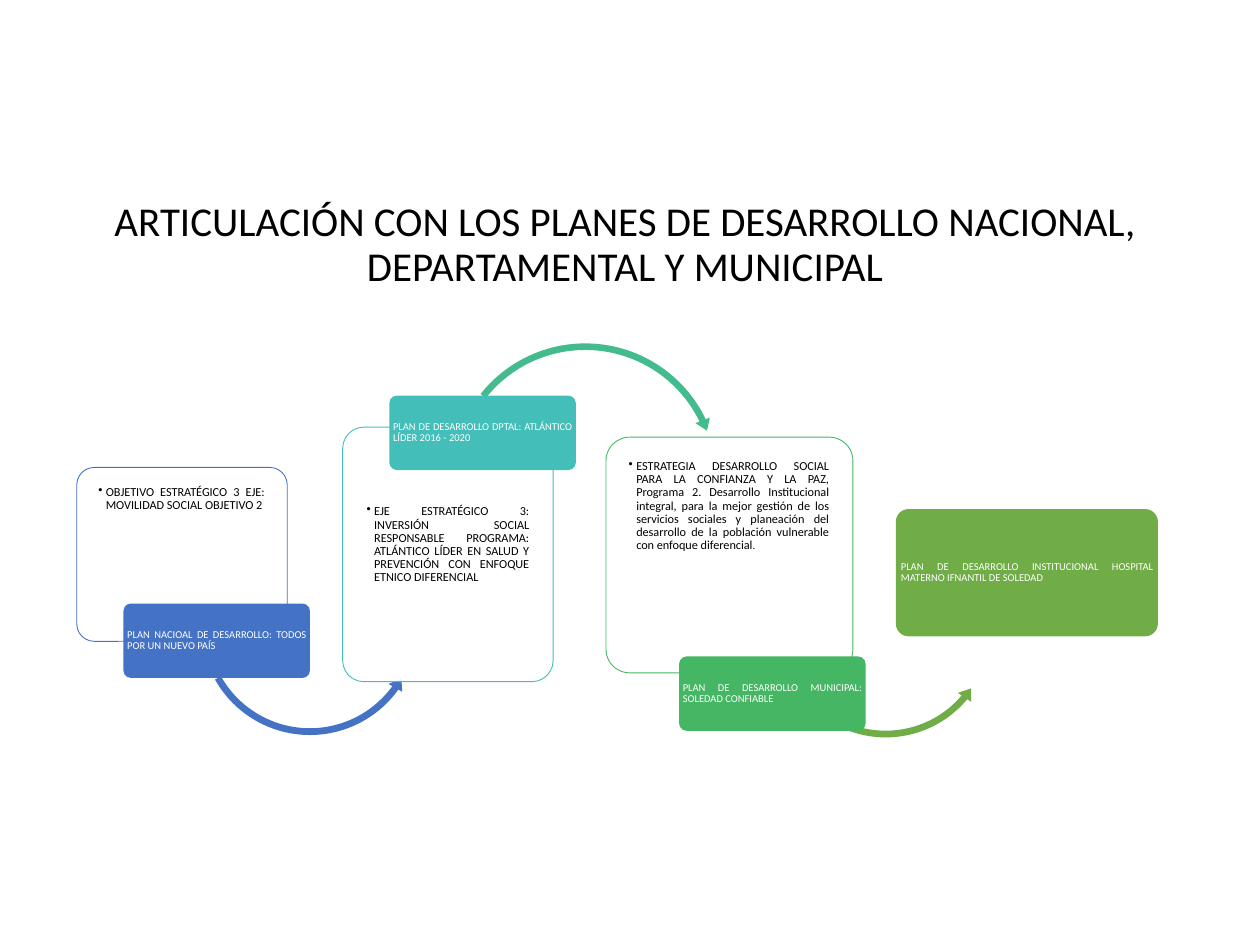
from lxml import etree
from pptx import Presentation
from pptx import util as u
from pptx.dml.color import RGBColor
from pptx.enum import shapes, text
from pptx.oxml.ns import qn

PX = 9144  # 100 px to the inch
FONT = "Calibri"
BLACK = RGBColor(0x00, 0x00, 0x00)
WHITE = RGBColor(0xFF, 0xFF, 0xFF)
BLUE = RGBColor(0x44, 0x72, 0xC4)
TEAL = RGBColor(0x43, 0xBE, 0xB9)
SEA_GREEN = RGBColor(0x43, 0xBB, 0x8D)
GREEN = RGBColor(0x45, 0xB6, 0x64)
OLIVE = RGBColor(0x70, 0xAD, 0x47)

ROUNDED = shapes.MSO_SHAPE.ROUNDED_RECTANGLE
ARC = shapes.MSO_SHAPE.CIRCULAR_ARROW
LEFT_ARC = shapes.MSO_SHAPE.LEFT_CIRCULAR_ARROW
TOP, MIDDLE = text.MSO_ANCHOR.TOP, text.MSO_ANCHOR.MIDDLE
CENTER, JUSTIFY = text.PP_ALIGN.CENTER, text.PP_ALIGN.JUSTIFY
LABEL_SIZE = (148, 59)


def px(*lengths):
    return [u.Emu(length * PX) for length in lengths]


def add_bullet(paragraph, indent):
    properties = paragraph._p.get_or_add_pPr()
    properties.set("marL", str(indent * PX))
    properties.set("indent", str(-indent * PX))
    etree.SubElement(properties, qn("a:buChar")).set("char", "•")


def set_opacity(fill, percent):
    color = fill._xPr.find(qn("a:solidFill"))[0]
    etree.SubElement(color, qn("a:alpha")).set("val", str(percent * 1000))


class Diagram:
    def __init__(self, slide, font):
        self.slide = slide
        self.font = font

    def shape(self, kind, box, color, adjustments):
        shape = self.slide.shapes.add_shape(kind, *px(*box))
        shape.shadow.inherit = False
        shape.fill.solid()
        shape.fill.fore_color.rgb = color
        shape.line.fill.background()
        for index, value in enumerate(adjustments):
            shape.adjustments[index] = value
        return shape

    def text(self, runs, box, color=BLACK, align=JUSTIFY, anchor=TOP,
             inset=(10, 5), bullet=False):
        """Add one paragraph made of (wording, size) runs."""
        frame = self.slide.shapes.add_textbox(*px(*box)).text_frame
        frame.word_wrap = True
        frame.vertical_anchor = anchor
        frame.margin_left = frame.margin_right = inset[0] * PX
        frame.margin_top = frame.margin_bottom = inset[1] * PX
        paragraph = frame.paragraphs[0]
        paragraph.alignment = align
        paragraph.line_spacing = 0.9
        if bullet:
            add_bullet(paragraph, 6)
        for wording, size in runs:
            run = paragraph.add_run()
            run.text = wording
            run.font.name = self.font
            run.font.size = u.Pt(size)
            run.font.color.rgb = color

    def card(self, box, text_box, color, runs):
        shape = self.shape(ROUNDED, box, WHITE, [0.1])
        set_opacity(shape.fill, 90)
        shape.line.color.rgb = color
        shape.line.width = u.Pt(0.5)
        self.text(runs, text_box, inset=(14, 14), bullet=True)

    def label(self, wording, box, color, border=2):
        left, top, width, height = box
        self.shape(ROUNDED, box, color, [0.1])
        inner = (left + border, top + border,
                 width - 2 * border, height - 2 * border)
        self.text([(wording, 6)], inner, color=WHITE, anchor=MIDDLE, inset=(1, 1))

    def arrow(self, kind, left, top, size, color, adjustments):
        self.shape(kind, (left, top, size, size), color, adjustments)


STAGES = [
    dict(card=(61, 371, 167, 138), body=(64, 375, 160, 102), color=BLUE,
         runs=[("OBJETIVO ESTRATÉGICO 3 EJE: MOVILIDAD SOCIAL OBJETIVO 2", 7)],
         arrow=(LEFT_ARC, 156, 407, 180, BLUE, (0.03, 3.63, 21.49, 90.35, 0.035)),
         label="PLAN NACIOAL DE DESARROLLO: TODOS POR UN NUEVO PAÍS",
         label_at=(98, 479)),
    dict(card=(272, 339, 167, 202), body=(277, 387, 157, 150), color=TEAL,
         runs=[("EJE ESTRATÉGICO 3: INVERSIÓN SOCIAL RESPONSABLE PROGRAMA: "
                "ATLÁNTICO LÍDER EN SALUD Y PREVENCIÓN CON ENFOQUE ETNICO "
                "DIFERENCIAL", 7)],
         arrow=(ARC, 355, 269, 219, SEA_GREEN, (0.024, 2.95, 200.57, 131.04, 0.028)),
         label="PLAN DE DESARROLLO DPTAL: ATLÁNTICO LÍDER 2016 - 2020",
         label_at=(309, 314)),
    dict(card=(481, 347, 196, 187), body=(485, 351, 187, 138), color=GREEN,
         runs=[("ESTRATEGIA DESARROLLO SOCIAL PARA LA CONFIANZA Y LA PAZ, "
                "Programa 2. Desarrollo Institucional integral, para la mejor "
                "gestión de los servicios sociales y planeación del desarrollo "
                "de la población vulnerable con enfoque diferencial", 7), (".", 6)],
         arrow=(LEFT_ARC, 615, 413, 176, OLIVE, (0.03, 3.74, 24.01, 92.76, 0.036)),
         label="PLAN DE DESARROLLO MUNICIPAL: SOLEDAD CONFIABLE",
         label_at=(539, 521)),
]


def main():
    presentation = Presentation()
    presentation.slide_width, presentation.slide_height = px(1000, 750)
    slide = presentation.slides.add_slide(presentation.slide_layouts[6])
    diagram = Diagram(slide, FONT)

    diagram.text([("ARTICULACIÓN CON LOS PLANES DE DESARROLLO NACIONAL, "
                   "DEPARTAMENTAL Y MUNICIPAL", 23.4)],
                 (65, 141, 862, 108), align=CENTER, anchor=MIDDLE)
    for stage in STAGES:
        diagram.card(stage["card"], stage["body"], stage["color"], stage["runs"])
        diagram.arrow(*stage["arrow"])
        diagram.label(stage["label"], stage["label_at"] + LABEL_SIZE, stage["color"])
    diagram.label("PLAN DE DESARROLLO INSTITUCIONAL HOSPITAL MATERNO IFNANTIL DE SOLEDAD",
                  (711, 404, 208, 101), OLIVE, border=3)

    presentation.save("out.pptx")


if __name__ == "__main__":
    main()
